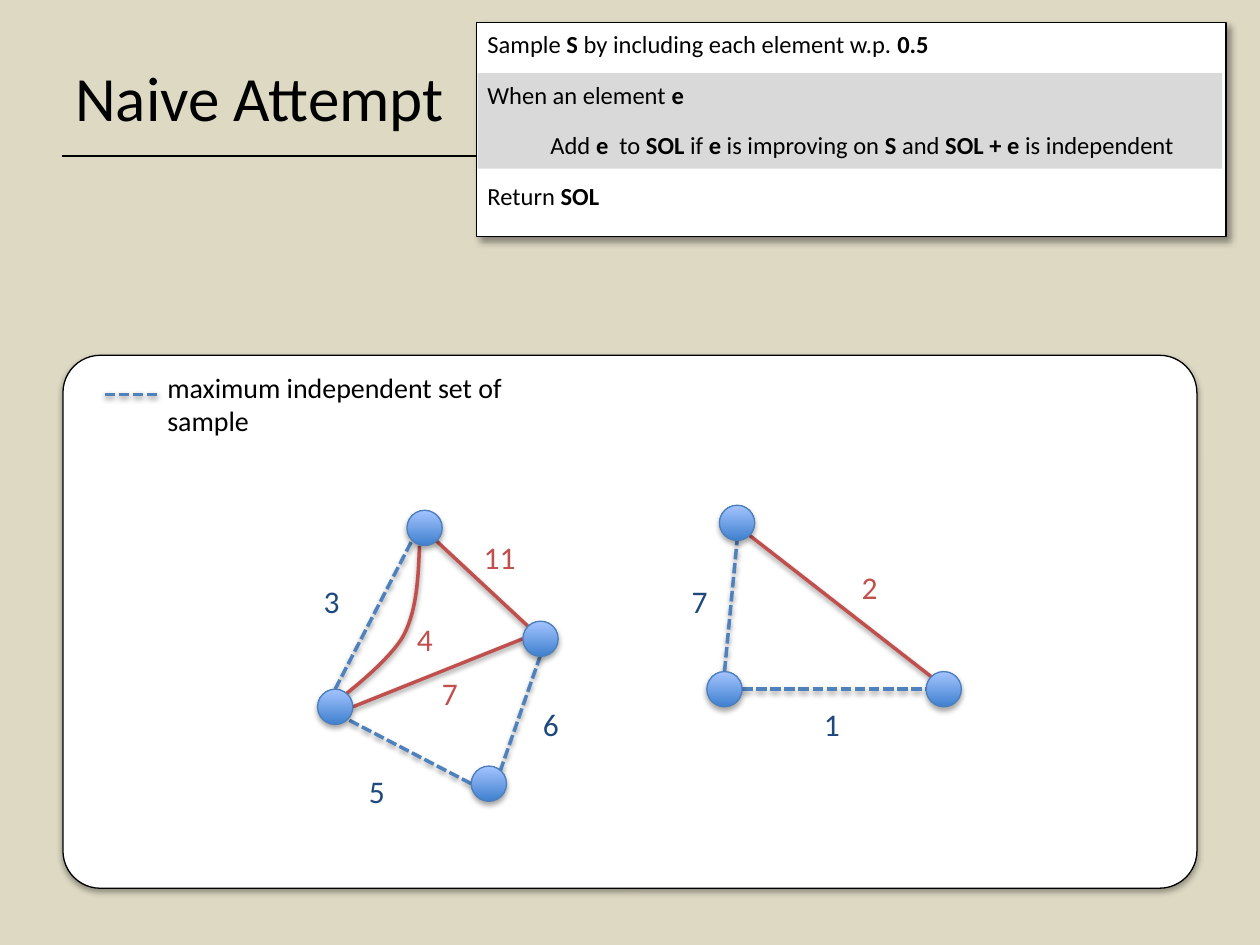
from dataclasses import dataclass
from typing import Any, NamedTuple

import pptx
import pptx.dml.color
import pptx.enum.dml
import pptx.enum.shapes
import pptx.enum.text
import pptx.oxml.ns
import pptx.util
from lxml import etree

Inches = pptx.util.Inches
Pt = pptx.util.Pt
Kind = pptx.enum.shapes.MSO_SHAPE
qn = pptx.oxml.ns.qn


class Shade(NamedTuple):
    alpha: int
    blur: float
    dist: float
    angle: int


@dataclass(frozen=True)
class Theme:
    font: str = "Calibri"
    sand: str = "DDD9C3"
    white: str = "FFFFFF"
    black: str = "000000"
    gray: str = "D9D9D9"
    blue: str = "4F81BD"
    navy: str = "1F497D"
    red: str = "C0504D"
    rim: str = "4B7EBC"
    deep: str = "3F80CE"
    pale: str = "A4C4FF"
    title: float = 36
    label: float = 18
    legend: float = 16
    code: float = 14
    thin: float = 0.75
    edge: float = 2
    box: Shade = Shade(40, 4, 3, 45)
    soft: Shade = Shade(35, 3.1, 1.8, 90)
    stroke: Shade = Shade(38, 3.1, 1.6, 90)


class Edge(NamedTuple):
    x1: float
    y1: float
    x2: float
    y2: float
    sample: bool


class Label(NamedTuple):
    text: str
    x: float
    y: float
    sample: bool


class Run(NamedTuple):
    text: str
    bold: bool = False


class Step(NamedTuple):
    runs: list[Run]
    indent: float = 0


T = Theme()
SIZE = 0.28  # node diameter

NODES = [(5.71, 4.01), (5.61, 5.33), (7.35, 5.33), (3.74, 6.08),
         (4.15, 4.93), (3.23, 4.05), (2.52, 5.47)]
EDGES = [
    Edge(0.83, 3.13, 1.27, 3.13, True),  # legend key
    Edge(2.66, 5.47, 3.27, 4.29, True),
    Edge(3.74, 6.22, 2.76, 5.71, True),
    Edge(4.29, 5.2, 3.97, 6.12, True),
    Edge(5.75, 5.33, 5.85, 4.29, True),
    Edge(5.89, 5.47, 7.35, 5.47, True),
    Edge(2.8, 5.61, 4.15, 5.07, False),
    Edge(5.95, 4.25, 7.39, 5.37, False),
    Edge(3.46, 4.29, 4.19, 4.97, False),
]
CURVE = [(3.33, 4.33), (3.32, 4.58), (3.31, 4.83), (3.21, 5.03),
         (3.11, 5.23), (2.73, 5.52), (2.73, 5.52)]
LABELS = [
    Label("3", 2.47, 4.57, True), Label("5", 2.83, 6.08, True),
    Label("6", 4.21, 5.55, True), Label("7", 5.39, 4.57, True),
    Label("1", 6.44, 5.55, True), Label("4", 3.21, 4.87, False),
    Label("7", 3.41, 5.3, False), Label("2", 6.74, 4.46, False),
    Label("11", 3.74, 4.22, False),
]
STEPS = [
    Step([Run("Sample "), Run("S", True),
          Run(" by including each element w.p. "), Run("0.5", True)]),
    Step([Run("When an element "), Run("e", True)]),
    Step([Run("Add "), Run("e ", True), Run(" to "), Run("SOL ", True),
          Run("if "), Run("e", True), Run(" is improving on "),
          Run("S", True), Run(" and "), Run("SOL + e ", True),
          Run("is independent")], 0.5),
    Step([Run("Return "), Run("SOL", True)]),
]


def rgb(code: str) -> pptx.dml.color.RGBColor:
    return pptx.dml.color.RGBColor.from_string(code)


def cast(item: Any, shade: Shade | None) -> None:
    """Set the shadow; call once the line is in place."""
    props = item._element.spPr
    for old in props.findall(qn("a:effectLst")):
        props.remove(old)
    group = etree.SubElement(props, qn("a:effectLst"))
    if shade:
        drop = etree.SubElement(
            group, qn("a:outerShdw"), blurRad=str(Pt(shade.blur)),
            dist=str(Pt(shade.dist)), dir=str(shade.angle * 60000),
            algn="ctr", rotWithShape="0")
        tint = etree.SubElement(drop, qn("a:srgbClr"), val=T.black)
        etree.SubElement(tint, qn("a:alpha"), val=str(shade.alpha * 1000))


def ink(item: Any, color: str, width: float) -> None:
    item.line.color.rgb = rgb(color)
    item.line.width = Pt(width)


def block(slide: Any, kind: Any, at: tuple, fill: str,
          line: str | None = None, shade: Shade | None = None) -> Any:
    item = slide.shapes.add_shape(kind, *map(Inches, at))
    item.fill.solid()
    item.fill.fore_color.rgb = rgb(fill)
    if line:
        ink(item, line, T.thin)
    else:
        item.line.fill.background()
    cast(item, shade)
    return item


def write(slide: Any, at: tuple, steps: list[Step], size: float,
          color: str, wrap: bool = True, before: float = 0) -> Any:
    frame = slide.shapes.add_textbox(*map(Inches, at)).text_frame
    frame.word_wrap = wrap
    for i, step in enumerate(steps):
        para = frame.add_paragraph() if i else frame.paragraphs[0]
        para.space_before = Pt(before)
        if step.indent:
            para._p.get_or_add_pPr().set("marL", str(Inches(step.indent)))
        for part in step.runs:
            run = para.add_run()
            run.text = part.text
            run.font.name = T.font
            run.font.size = Pt(size)
            run.font.bold = part.bold
            run.font.color.rgb = rgb(color)
    return frame


def join(slide: Any, edge: Edge) -> None:
    item = slide.shapes.add_connector(
        pptx.enum.shapes.MSO_CONNECTOR.STRAIGHT, *map(Inches, edge[:4]))
    ink(item, T.blue if edge.sample else T.red, T.edge)
    if edge.sample:
        item.line.dash_style = pptx.enum.dml.MSO_LINE.SQUARE_DOT
    cast(item, T.stroke)


def bend(slide: Any, points: list[tuple]) -> None:
    spots = [(Inches(x), Inches(y)) for x, y in points]
    maker = slide.shapes.build_freeform(*spots[0])
    maker.add_line_segments(spots[1:], close=False)
    item = maker.convert_to_shape()
    item.fill.background()
    ink(item, T.red, T.edge)
    cast(item, T.stroke)
    # Every three straight legs become one cubic curve
    track = next(item._element.iter(qn("a:path")))
    legs = track.findall(qn("a:lnTo"))
    for i in range(0, len(legs), 3):
        arc = etree.SubElement(track, qn("a:cubicBezTo"))
        for leg in legs[i:i + 3]:
            arc.append(leg[0])
            track.remove(leg)


def node(slide: Any, x: float, y: float) -> None:
    item = block(slide, Kind.OVAL, (x, y, SIZE, SIZE), T.deep, T.rim, T.soft)
    item.fill.gradient()
    item.fill.gradient_angle = 90
    for stop, place, color in zip(item.fill.gradient_stops, (0, 1),
                                  (T.deep, T.pale)):
        stop.position = place
        stop.color.rgb = rgb(color)


def main() -> None:
    deck = pptx.Presentation()
    deck.slide_width, deck.slide_height = Inches(10), Inches(7.5)
    slide = deck.slides.add_slide(deck.slide_layouts[6])
    slide.background.fill.solid()
    slide.background.fill.fore_color.rgb = rgb(T.sand)

    # Title and rule
    rule = slide.shapes.add_connector(
        pptx.enum.shapes.MSO_CONNECTOR.STRAIGHT,
        *map(Inches, (0.49, 1.24, 9.49, 1.24)))
    ink(rule, T.black, 1)
    cast(rule, None)
    # Algorithm box
    block(slide, Kind.RECTANGLE, (3.78, 0.18, 5.95, 1.7), T.white, T.black, T.box)
    head = write(slide, (0.5, 0.3, 9, 0.93), [Step([Run("Naive Attempt")])],
                 T.title, T.black)
    head.vertical_anchor = pptx.enum.text.MSO_ANCHOR.MIDDLE
    block(slide, Kind.RECTANGLE, (3.79, 0.58, 5.91, 0.76), T.gray)
    write(slide, (3.77, 0.18, 6.41, 2.19), STEPS, T.code, T.black, before=12.2)

    # Graph panel and legend
    panel = block(slide, Kind.ROUNDED_RECTANGLE, (0.5, 2.82, 9, 4.23),
                  T.white, T.black, T.soft)
    panel.adjustments[0] = 0.07
    write(slide, (1.23, 2.89, 3.4, 0.37),
          [Step([Run("maximum independent set of sample")])], T.legend, T.black)

    # Graph
    for edge in EDGES:
        join(slide, edge)
    bend(slide, CURVE)
    for x, y in NODES:
        node(slide, x, y)
    for tag in LABELS:
        wide = 0.21 + 0.12 * len(tag.text)
        write(slide, (tag.x, tag.y, wide, 0.4), [Step([Run(tag.text)])],
              T.label, T.navy if tag.sample else T.red, wrap=False)

    deck.save("out.pptx")


if __name__ == "__main__":
    main()
